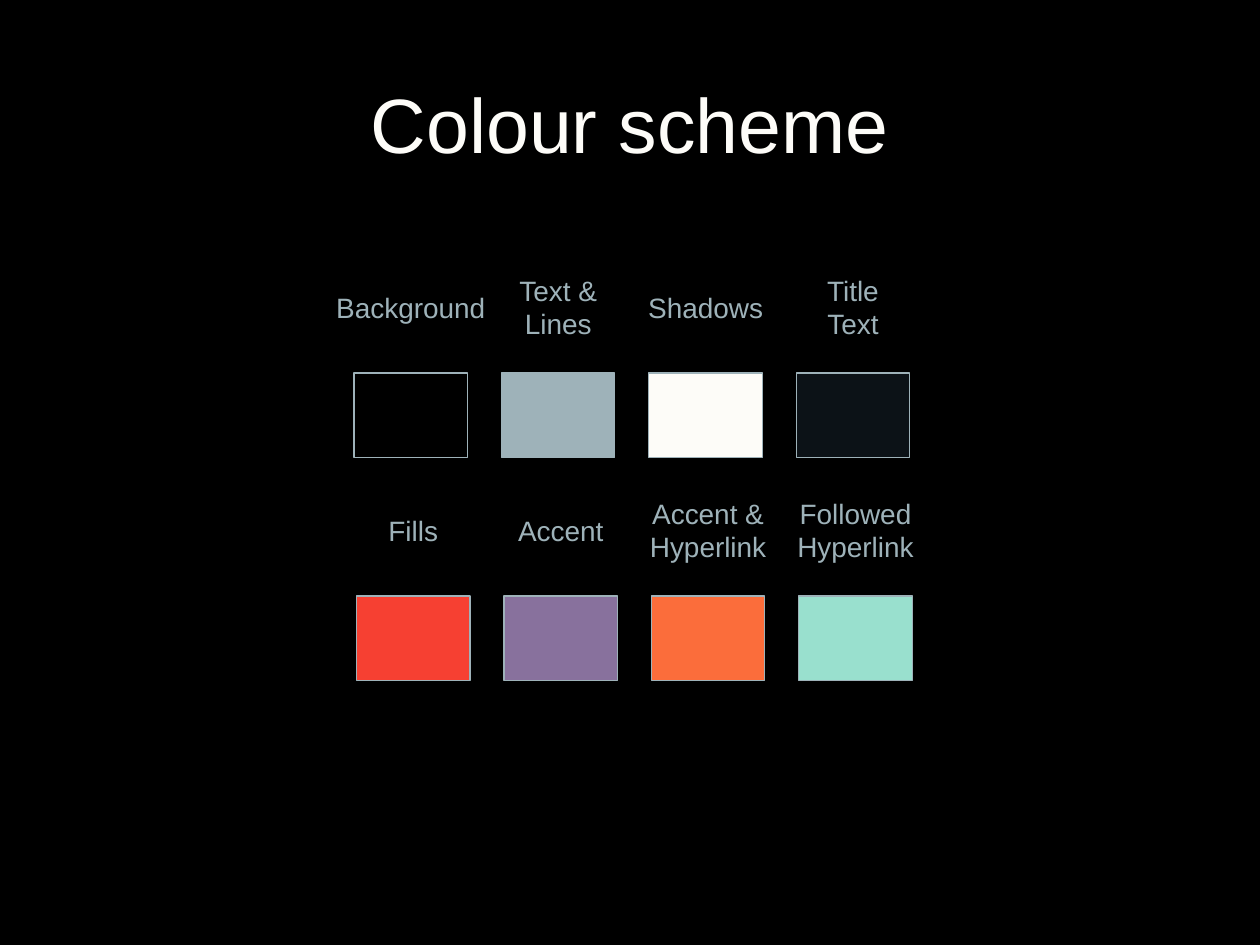
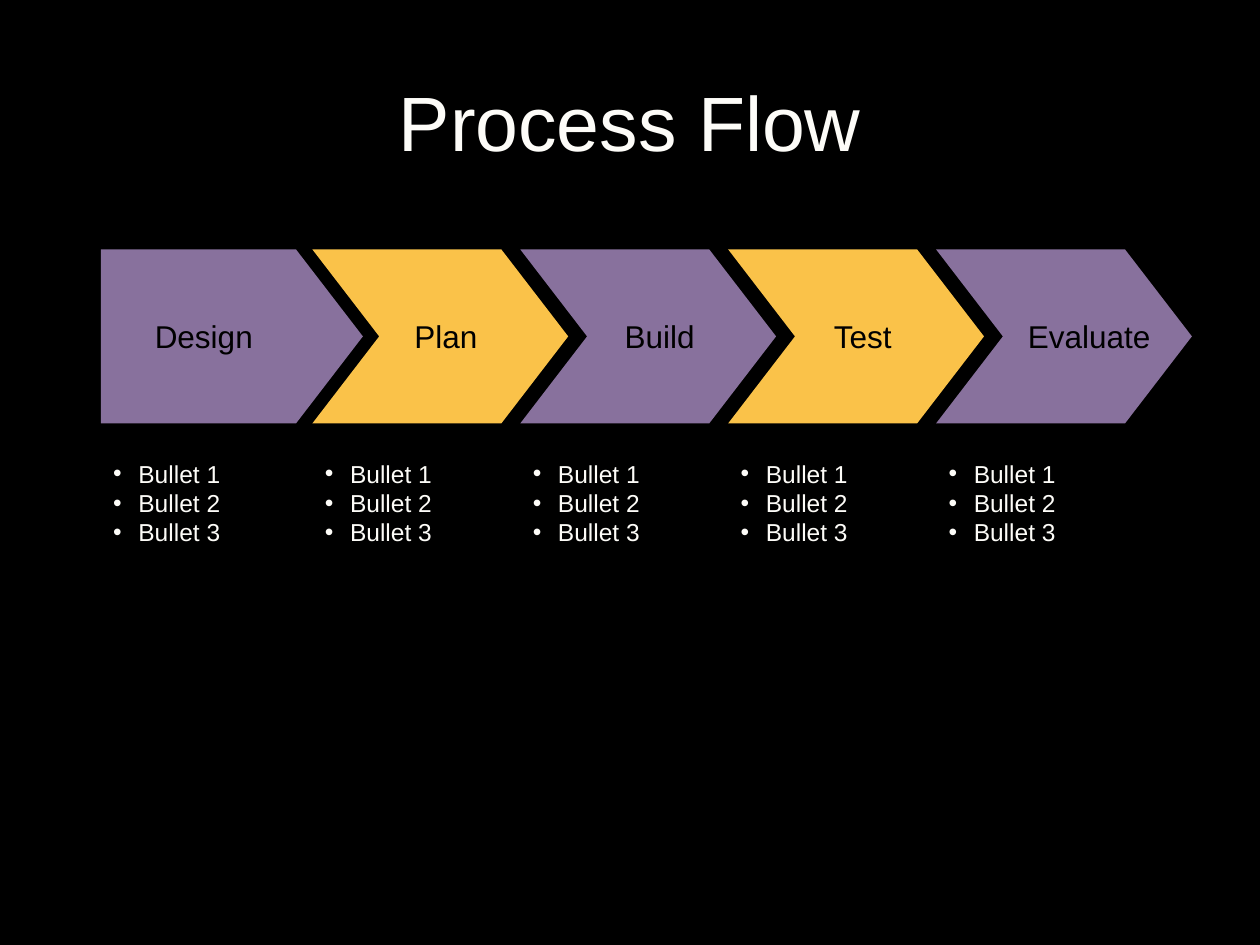
from lxml import etree
from pptx import Presentation
from pptx import util as u
from pptx.dml.color import RGBColor
from pptx.enum import shapes, text
from pptx.oxml.ns import qn

BLACK = RGBColor(0x00, 0x00, 0x00)
CREAM = RGBColor(0xFD, 0xFC, 0xF8)
STEEL = RGBColor(0x9E, 0xB2, 0xB9)
NAVY = RGBColor(0x0C, 0x12, 0x17)
RED = RGBColor(0xF6, 0x40, 0x32)
PLUM = RGBColor(0x88, 0x71, 0x9D)
CORAL = RGBColor(0xFB, 0x6D, 0x3B)
MINT = RGBColor(0x99, 0xE0, 0xCE)
GOLD = RGBColor(0xFA, 0xC2, 0x49)
FONT = "Arial"
IN = u.Inches


def write(box, words, size, color, align=text.PP_ALIGN.LEFT, wrap=True,
          anchor=text.MSO_ANCHOR.TOP, indent=0):
    frame = box.text_frame
    frame.text = words
    frame.word_wrap = wrap
    frame.vertical_anchor = anchor
    frame.auto_size = text.MSO_AUTO_SIZE.NONE if wrap else text.MSO_AUTO_SIZE.SHAPE_TO_FIT_TEXT
    for para in frame.paragraphs:
        para.alignment = align
        if indent:
            props = para._p.get_or_add_pPr()
            props.set("marL", str(IN(indent)))
            props.set("indent", str(-IN(indent)))
            etree.SubElement(props, qn("a:buFont")).set("typeface", FONT)
            etree.SubElement(props, qn("a:buChar")).set("char", "•")
        for run in para.runs:
            run.font.name = FONT
            run.font.size = u.Pt(size)
            run.font.color.rgb = color


def start(title, top):
    page = deck.slides.add_slide(deck.slide_layouts[5])
    head = page.shapes.title
    head.left, head.top, head.width, head.height = IN(0.5), IN(top), IN(9), IN(1.25)
    write(head, title, 44, CREAM, text.PP_ALIGN.CENTER, anchor=text.MSO_ANCHOR.MIDDLE)
    return page.shapes


deck = Presentation()
deck.slide_width, deck.slide_height = IN(10), IN(7.5)
ground = deck.slide_master.background.fill
ground.solid()
ground.fore_color.rgb = BLACK

page = start("Colour scheme", 0.35)
PITCH, WIDE, TALL = 1.17, 0.9, 0.67
rows = [
    (2.81, 2.96, [("Background", 1.42, BLACK), ("Text &\nLines", 0.88, STEEL),
                  ("Shadows", 1.15, CREAM), ("Title\vText", 0.67, NAVY)]),
    (2.83, 4.73, [("Fills", 0.64, RED), ("Accent", 0.92, PLUM),
                  ("Accent &\nHyperlink", 1.17, CORAL), ("Followed\nHyperlink", 1.17, MINT)]),
]
for left, top, swatches in rows:
    for col, (name, width, color) in enumerate(swatches):
        x = left + col * PITCH
        chip = page.add_shape(shapes.MSO_SHAPE.RECTANGLE, IN(x), IN(top), IN(WIDE), IN(TALL))
        chip.shadow.inherit = False
        chip.fill.solid()
        chip.fill.fore_color.rgb = color
        chip.line.color.rgb = STEEL
        chip.line.width = u.Pt(0.75)
        height = 0.37 if name.isalpha() else 0.64
        label = page.add_textbox(IN(x + (WIDE - width) / 2), IN(top - 0.52 - height / 2),
                                 IN(width), IN(height))
        write(label, name, 16, STEEL, text.PP_ALIGN.CENTER, wrap=False)

page = start("Process Flow", 0.33)
TOP, MID, LOW, TIP = 1.98, 2.67, 3.36, 0.53
steps = [("Design", 1.13, 0.98), ("Plan", 3.19, 0.7), ("Build", 4.86, 0.76),
         ("Test", 6.52, 0.69), ("Evaluate", 8.06, 1.17)]
for col, (name, spot, width) in enumerate(steps):
    x = 2.48 + (col - 1) * 1.65 if col else 0.8
    edge = x + (1.5 if col else 1.55)
    points = [(edge, TOP), (edge + TIP, MID), (edge, LOW), (x, LOW)]
    if col:
        points.append((x + TIP, MID))
    pen = page.build_freeform(IN(x), IN(TOP))
    pen.add_line_segments([(IN(a), IN(b)) for a, b in points])
    arrow = pen.convert_to_shape()
    arrow.shadow.inherit = False
    arrow.fill.solid()
    arrow.fill.fore_color.rgb = GOLD if col % 2 else PLUM
    arrow.line.fill.background()
    label = page.add_textbox(IN(spot), IN(2.47), IN(width), IN(0.4))
    write(label, name, 18, BLACK, wrap=False)
    notes = page.add_textbox(IN(x), IN(3.59), IN(1.51), IN(2.57))
    write(notes, "Bullet 1\nBullet 2\nBullet 3", 14, CREAM, indent=0.2)

deck.save("out.pptx")
